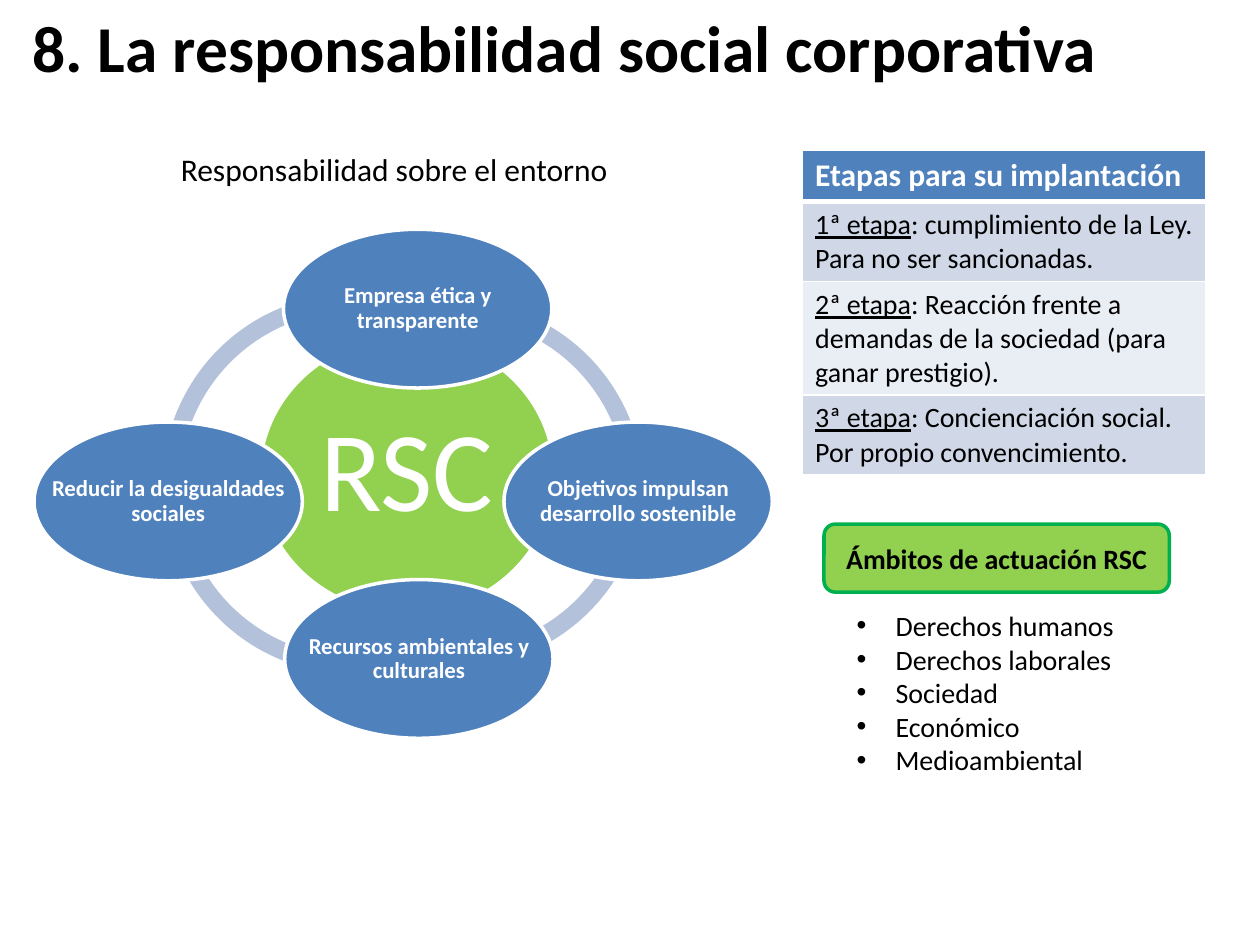
from dataclasses import dataclass

from lxml import etree
from pptx import Presentation
from pptx.dml.color import RGBColor
from pptx.enum.shapes import MSO_SHAPE
from pptx.enum.text import MSO_ANCHOR, PP_ALIGN
from pptx.oxml.ns import qn
from pptx.util import Inches, Pt

BLOCK_ARC = MSO_SHAPE.BLOCK_ARC
ELLIPSE = MSO_SHAPE.OVAL
ROUNDED = MSO_SHAPE.ROUNDED_RECTANGLE
LEFT = PP_ALIGN.LEFT
CENTER = PP_ALIGN.CENTER
TOP = MSO_ANCHOR.TOP
MIDDLE = MSO_ANCHOR.MIDDLE


@dataclass(frozen=True)
class Theme:
    font: str = "Calibri"
    black: str = "000000"
    white: str = "FFFFFF"
    blue: str = "4F81BD"
    pale_blue: str = "B3C1DB"
    green: str = "92D050"
    dark_green: str = "00B050"
    bands: tuple = ("D0D8E8", "E9EDF4")
    title: float = 37.4
    heading: float = 18
    body: float = 16
    label: float = 13
    hub: float = 65
    outline: float = 2


class SlideBuilder:
    def __init__(self, slide, theme):
        self.slide = slide
        self.theme = theme

    def style(self, paragraph, size, color, bold=False, align=LEFT):
        paragraph.alignment = align
        font = paragraph.font
        font.name = self.theme.font
        font.size = Pt(size)
        font.bold = bold
        font.color.rgb = RGBColor.from_string(color)

    def shape(self, kind, box, fill, line=None):
        shape = self.slide.shapes.add_shape(kind, *map(Inches, box))
        shape.shadow.inherit = False
        shape.fill.solid()
        shape.fill.fore_color.rgb = RGBColor.from_string(fill)
        if line:
            shape.line.color.rgb = RGBColor.from_string(line)
            shape.line.width = Pt(self.theme.outline)
        else:
            shape.line.fill.background()
        return shape

    def arc(self, left, top, start, end):
        size = 3.03
        shape = self.shape(BLOCK_ARC, (left, top, size, size), self.theme.pale_blue)
        degree = 60000 / 100000
        for index, value in enumerate((start * degree, end * degree, 0.046)):
            shape.adjustments[index] = value

    def text(self, box, text, size, color=None, bold=False, align=LEFT,
             anchor=TOP, inset=None, spacing=None):
        frame = self.slide.shapes.add_textbox(*map(Inches, box)).text_frame
        frame.word_wrap = True
        frame.vertical_anchor = anchor
        if inset is not None:
            frame.margin_left = frame.margin_right = Inches(inset)
            frame.margin_top = frame.margin_bottom = Inches(inset)
        paragraph = frame.paragraphs[0]
        paragraph.text = text
        if spacing:
            paragraph.line_spacing = spacing
        self.style(paragraph, size, color or self.theme.black, bold, align)

    def node(self, box, text, fill, size, bold, inset):
        self.shape(ELLIPSE, box, fill, self.theme.white)
        self.text(box, text, size, self.theme.white, bold, CENTER, MIDDLE, inset, 0.9)

    def button(self, box, text):
        shape = self.shape(ROUNDED, box, self.theme.green, self.theme.dark_green)
        frame = shape.text_frame
        frame.vertical_anchor = MIDDLE
        frame.paragraphs[0].text = text
        self.style(frame.paragraphs[0], self.theme.body, self.theme.black, True, CENTER)

    def bullets(self, box, items):
        frame = self.slide.shapes.add_textbox(*map(Inches, box)).text_frame
        frame.word_wrap = True
        for index, item in enumerate(items):
            paragraph = frame.add_paragraph() if index else frame.paragraphs[0]
            paragraph.text = item
            properties = paragraph._p.get_or_add_pPr()
            properties.set("marL", str(Inches(0.31)))
            properties.set("indent", str(-Inches(0.31)))
            etree.SubElement(properties, qn("a:buFont"), typeface="Arial")
            etree.SubElement(properties, qn("a:buChar"), char="•")
            self.style(paragraph, self.theme.body, self.theme.black)

    def cell(self, cell, fill, top_width, bottom_width):
        properties = cell._tc.get_or_add_tcPr()
        widths = {"lnL": 1, "lnR": 1, "lnT": top_width, "lnB": bottom_width}
        for tag, width in widths.items():
            line = etree.SubElement(properties, qn(f"a:{tag}"), w=str(Pt(width)))
            solid = etree.SubElement(line, qn("a:solidFill"))
            etree.SubElement(solid, qn("a:srgbClr"), val=self.theme.white)
        cell.fill.solid()
        cell.fill.fore_color.rgb = RGBColor.from_string(fill)

    def stages(self, box, header, stages, heights):
        table = self.slide.shapes.add_table(len(heights), 1, *map(Inches, box)).table
        for row, height in zip(table.rows, heights):
            row.height = Inches(height)
        heading = table.cell(0, 0)
        self.cell(heading, self.theme.blue, 1, 3)
        heading.text = header
        self.style(heading.text_frame.paragraphs[0], self.theme.heading,
                   self.theme.white, True)
        for index, (name, description) in enumerate(stages):
            cell = table.cell(index + 1, 0)
            self.cell(cell, self.theme.bands[index % 2], 1 if index else 3, 1)
            paragraph = cell.text_frame.paragraphs[0]
            self.style(paragraph, self.theme.body, self.theme.black)
            run = paragraph.add_run()
            run.text = name
            run.font.underline = True
            paragraph.add_run().text = f": {description}"


def main():
    presentation = Presentation()
    presentation.slide_width = Inches(10)
    presentation.slide_height = Inches(7.5)
    theme = Theme()
    slide = presentation.slides.add_slide(presentation.slide_layouts[6])
    builder = SlideBuilder(slide, theme)

    builder.text((0.16, 0.05, 9.42, 0.63), "8. La responsabilidad social corporativa",
                 theme.title, bold=True, anchor=MIDDLE)
    builder.text((0.76, 1.14, 4.74, 0.4), "Responsabilidad sobre el entorno",
                 theme.heading, align=CENTER)

    for arc in (
        (1.29, 2.32, 104.59, 174.17),
        (1.29, 2.33, 185.83, 255.41),
        (2.09, 2.27, 4.59, 60.43),
        (2.08, 2.38, 290, 1.86),
    ):
        builder.arc(*arc)

    builder.node((2.06, 2.67, 2.34, 2.2), "RSC", theme.green, theme.hub, False, 0.09)
    for left, top, text in (
        (2.25, 1.82, "Empresa ética y transparente"),
        (4, 3.35, "Objetivos impulsan desarrollo sostenible"),
        (2.26, 4.6, "Recursos ambientales y culturales"),
        (0.27, 3.35, "Reducir la desigualdades sociales"),
    ):
        builder.node((left, top, 2.13, 1.26), text, theme.blue, theme.label, True, 0.02)

    builder.stages(
        (6.37, 1.19, 3.2, 2.57),
        "Etapas para su implantación",
        (
            ("1ª etapa", "cumplimiento de la Ley. Para no ser sancionadas."),
            ("2ª etapa", "Reacción frente a demandas de la sociedad (para ganar prestigio)."),
            ("3ª etapa", "Concienciación social. Por propio convencimiento."),
        ),
        (0.41, 0.63, 0.9, 0.63),
    )
    builder.bullets(
        (6.7, 4.78, 2.42, 1.45),
        ("Derechos humanos", "Derechos laborales", "Sociedad", "Económico", "Medioambiental"),
    )
    builder.button((6.54, 4.16, 2.74, 0.54), "Ámbitos de actuación RSC")

    presentation.save("out.pptx")


if __name__ == "__main__":
    main()
